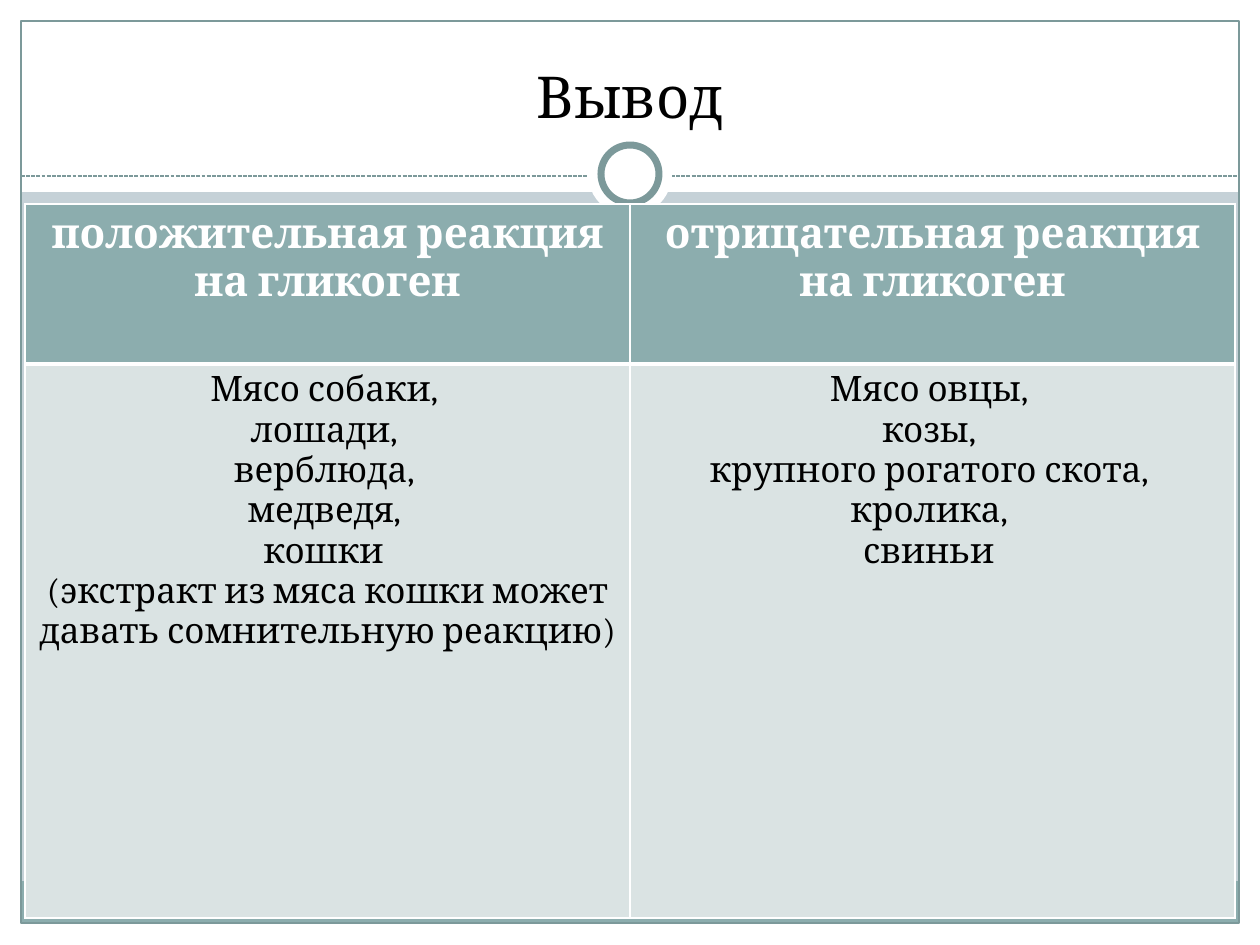
import lxml.etree
import pptx
import pptx.dml.color
import pptx.enum.dml
import pptx.enum.shapes
import pptx.enum.text
import pptx.oxml.ns
import pptx.util

SCALE = 914400 / 126
FONT = "Cambria"
COLORS = {
    "back": "C5D1D7",
    "white": "FFFFFF",
    "black": "000000",
    "teal": "8CADAE",
    "edge": "7C999A",
    "pale": "DAE3E3",
}
HEADS = ["положительная реакция на гликоген", "отрицательная реакция на гликоген"]
MEATS = [
    [
        "Мясо собаки, ",
        "лошади, ",
        "верблюда, ",
        "медведя, ",
        "кошки ",
        "(экстракт из мяса кошки может давать сомнительную реакцию)",
    ],
    ["Мясо овцы, ", "козы, ", "крупного рогатого скота, ", "кролика, ", "свиньи "],
]


def px(count):
    """Turn pixels into EMU."""
    return pptx.util.Emu(round(count * SCALE))


def tint(name):
    """Look up a colour by name."""
    return pptx.dml.color.RGBColor.from_string(COLORS[name])


def paint(fill, name):
    """Make a fill solid, or clear it when there is no colour."""
    if name:
        fill.solid()
        fill.fore_color.rgb = tint(name)
    else:
        fill.background()


def add_form(slide, kind, box, fill=None, line=None, width=0.75):
    """Add a preset shape with a plain fill and outline."""
    kind = getattr(pptx.enum.shapes.MSO_SHAPE, kind)
    form = slide.shapes.add_shape(kind, *map(px, box))
    form.shadow.inherit = False
    paint(form.fill, fill)
    paint(form.line.fill, line)
    if line:
        form.line.width = pptx.util.Pt(width)


def add_dash(slide, left, right, top):
    """Add a dashed level line."""
    kind = pptx.enum.shapes.MSO_CONNECTOR.STRAIGHT
    dash = slide.shapes.add_connector(kind, px(left), px(top), px(right), px(top))
    dash.line.color.rgb = tint("edge")
    dash.line.width = pptx.util.Pt(0.75)
    dash.line.dash_style = pptx.enum.dml.MSO_LINE.SQUARE_DOT
    props = dash._element.spPr
    lxml.etree.SubElement(props, pptx.oxml.ns.qn("a:effectLst"))


def write(frame, lines, size, color, bold=False):
    """Fill a text frame with centred paragraphs."""
    for index, text in enumerate(lines):
        para = frame.add_paragraph() if index else frame.paragraphs[0]
        para.alignment = pptx.enum.text.PP_ALIGN.CENTER
        run = para.add_run()
        run.text = text
        run.font.name = FONT
        run.font.size = pptx.util.Pt(size)
        run.font.bold = bold
        run.font.color.rgb = tint(color)


def add_title(slide, box, text):
    """Add the slide heading."""
    frame = slide.shapes.add_textbox(*map(px, box)).text_frame
    frame.word_wrap = True
    frame.vertical_anchor = pptx.enum.text.MSO_ANCHOR.BOTTOM
    write(frame, [text], 33, "black")


def add_edges(cell, widths):
    """Draw white cell borders, given widths by side."""
    props = cell._tc.get_or_add_tcPr()
    for side in "LRTB":
        width = str(pptx.util.Pt(widths.get(side, 1)))
        edge = lxml.etree.SubElement(props, pptx.oxml.ns.qn("a:ln" + side), w=width)
        fill = lxml.etree.SubElement(edge, pptx.oxml.ns.qn("a:solidFill"))
        lxml.etree.SubElement(fill, pptx.oxml.ns.qn("a:srgbClr"), val=COLORS["white"])


def add_grid(slide, box, rows):
    """Add the table of reactions."""
    grid = slide.shapes.add_table(2, 2, *map(px, box)).table
    for row, height in zip(grid.rows, rows):
        row.height = px(height)
    for col, (head, meats) in enumerate(zip(HEADS, MEATS)):
        top, body = grid.cell(0, col), grid.cell(1, col)
        add_edges(top, {"B": 3})
        add_edges(body, {"T": 3})
        paint(top.fill, "teal")
        paint(body.fill, "pale")
        write(top.text_frame, [head], 24, "white", True)
        write(body.text_frame, meats, 20, "black")


def main():
    """Build and save the slide."""
    deck = pptx.Presentation()
    deck.slide_width, deck.slide_height = px(1260), px(945)
    slide = deck.slides.add_slide(deck.slide_layouts[6])
    paint(slide.background.fill, "back")
    margins = [(0, 924, 1260, 21), (0, 0, 1260, 192), (0, 0, 21, 945), (1239, 0, 21, 945)]
    for box in margins:
        add_form(slide, "RECTANGLE", box, "white")
    add_form(slide, "RECTANGLE", (21, 881, 1217, 43), "teal")
    add_form(slide, "RECTANGLE", (21, 21, 1218, 902), line="edge")
    add_dash(slide, 21, 1239, 176)
    add_form(slide, "OVAL", (588, 132, 84, 84), "white")
    add_form(slide, "OVAL", (601, 145, 58, 58), "white", "edge", 4)
    add_title(slide, (42, 31, 1176, 105), "Вывод")
    add_grid(slide, (25, 204, 1210, 714), (160, 554))
    deck.save("out.pptx")


if __name__ == "__main__":
    main()
